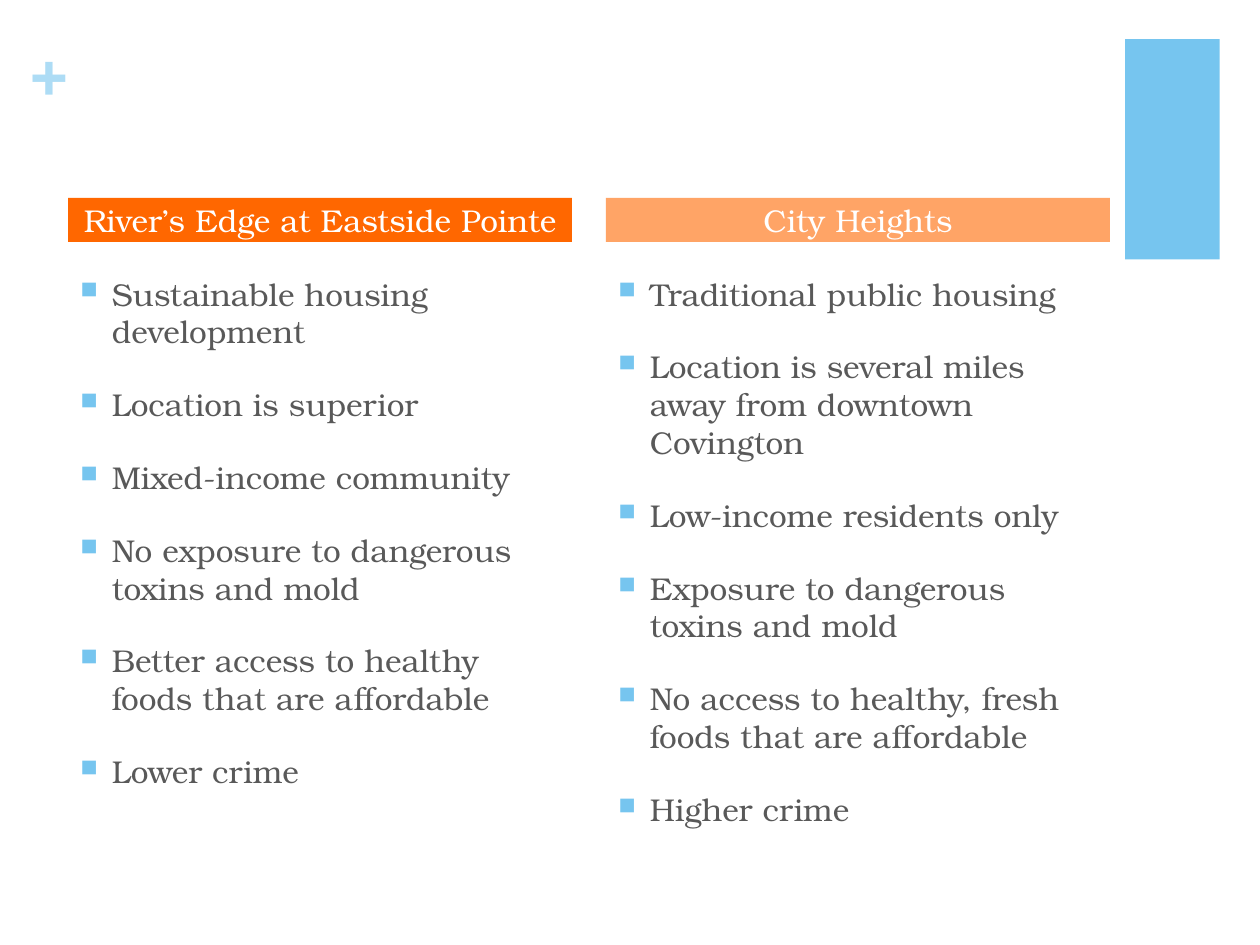
from dataclasses import dataclass

from lxml import etree
from pptx import Presentation
from pptx.dml.color import RGBColor
from pptx.enum.shapes import MSO_SHAPE
from pptx.enum.text import MSO_ANCHOR, PP_ALIGN
from pptx.oxml.ns import qn
from pptx.util import Inches, Pt

FONT = "TeX Gyre Bonum"
BLUE = RGBColor(0x76, 0xC5, 0xEF)
PALE_BLUE = RGBColor(0xAD, 0xDC, 0xF5)
ORANGE = RGBColor(0xFF, 0x67, 0x00)
PALE_ORANGE = RGBColor(0xFF, 0xA4, 0x66)
GRAY = RGBColor(0x59, 0x59, 0x59)
WHITE = RGBColor(0xFF, 0xFF, 0xFF)

RECTANGLE = MSO_SHAPE.RECTANGLE
LEFT, CENTER = PP_ALIGN.LEFT, PP_ALIGN.CENTER
MIDDLE = MSO_ANCHOR.MIDDLE

COLUMN_LEFT, COLUMN_PITCH, COLUMN_WIDTH = 0.54, 4.27, 4
HEADER_TOP, HEADER_HEIGHT = 1.57, 0.35
LIST_TOP, LIST_HEIGHT = 2.13, 4.57


@dataclass
class Column:
    title: str
    fill: RGBColor
    points: list[str]


COLUMNS = [
    Column("River’s Edge at Eastside Pointe", ORANGE, [
        "Sustainable housing development",
        "Location is superior",
        "Mixed-income community",
        "No exposure to dangerous toxins and mold",
        "Better access to healthy foods that are affordable",
        "Lower crime",
    ]),
    Column("City Heights", PALE_ORANGE, [
        "Traditional public housing",
        "Location is several miles away from downtown Covington",
        "Low-income residents only",
        "Exposure to dangerous toxins and mold",
        "No access to healthy, fresh foods that are affordable",
        "Higher crime",
    ]),
]


def add_bullet(paragraph) -> None:
    properties = paragraph._p.get_or_add_pPr()
    properties.set("marL", str(Inches(0.25)))
    properties.set("indent", str(Inches(-0.25)))
    color = etree.SubElement(properties, qn("a:buClr"))
    etree.SubElement(color, qn("a:srgbClr")).set("val", str(BLUE))
    etree.SubElement(properties, qn("a:buSzPct")).set("val", "75000")
    etree.SubElement(properties, qn("a:buChar")).set("char", "■")


def write_text(text_frame, lines: list[str], *, color: RGBColor, size: float = 18,
               bold: bool = False, align=LEFT, bullets: bool = False,
               space_before: float = 0) -> None:
    for index, line in enumerate(lines):
        paragraph = text_frame.paragraphs[0] if index == 0 else text_frame.add_paragraph()
        paragraph.alignment = align
        if index:
            paragraph.space_before = Pt(space_before)
        if bullets:
            add_bullet(paragraph)
        run = paragraph.add_run()
        run.text = line
        run.font.name = FONT
        run.font.size = Pt(size)
        run.font.bold = bold
        run.font.color.rgb = color


def add_rectangle(slide, left: float, top: float, width: float, height: float,
                  fill: RGBColor):
    shape = slide.shapes.add_shape(
        RECTANGLE, Inches(left), Inches(top), Inches(width), Inches(height))
    shape.shadow.inherit = False
    shape.fill.solid()
    shape.fill.fore_color.rgb = fill
    shape.line.fill.background()
    return shape


def add_text_frame(slide, left: float, top: float, width: float, height: float):
    box = slide.shapes.add_textbox(
        Inches(left), Inches(top), Inches(width), Inches(height))
    return box.text_frame


def add_column(slide, column: Column, left: float) -> None:
    # Bulleted list
    points = add_text_frame(slide, left, LIST_TOP, COLUMN_WIDTH, LIST_HEIGHT)
    points.word_wrap = True
    write_text(points, column.points, color=GRAY, bullets=True, space_before=20)

    # Header bar
    header = add_rectangle(
        slide, left, HEADER_TOP, COLUMN_WIDTH, HEADER_HEIGHT, column.fill).text_frame
    header.margin_top = header.margin_bottom = 0
    header.vertical_anchor = MIDDLE
    header.word_wrap = True
    write_text(header, [column.title], color=WHITE, align=CENTER)


def main() -> None:
    presentation = Presentation()
    presentation.slide_width, presentation.slide_height = Inches(10), Inches(7.5)
    slide = presentation.slides.add_slide(presentation.slide_layouts[6])

    # Corner decoration
    add_rectangle(slide, 8.93, 0.31, 0.75, 1.75, BLUE)
    plus = add_text_frame(slide, 0.24, 0.25, 0.29, 0.61)
    plus.margin_left = plus.margin_right = plus.margin_top = plus.margin_bottom = 0
    plus.word_wrap = True
    write_text(plus, ["+"], color=PALE_BLUE, size=36, bold=True)

    # Comparison columns
    for index, column in enumerate(COLUMNS):
        add_column(slide, column, COLUMN_LEFT + index * COLUMN_PITCH)

    presentation.save("out.pptx")


if __name__ == "__main__":
    main()
